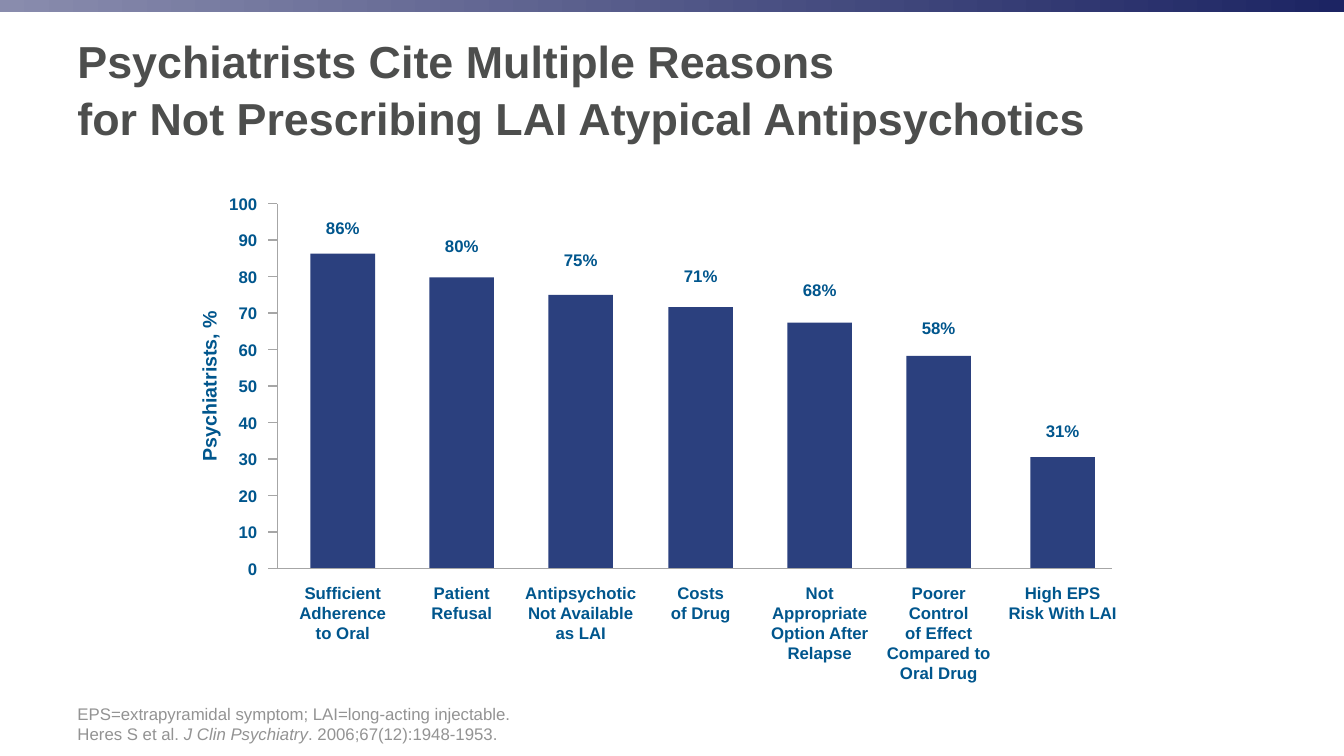
from dataclasses import dataclass

from lxml.etree import SubElement
from pptx import Presentation
from pptx.dml.color import RGBColor
from pptx.enum.shapes import MSO_CONNECTOR as Connector, MSO_SHAPE as Shape
from pptx.enum.text import MSO_ANCHOR as Anchor, PP_ALIGN as Align
from pptx.oxml.ns import qn
from pptx.util import Inches, Pt

COLORS = {
    "band_start": "898CAD",
    "band_end": "1C2463",
    "title": "4D4E4D",
    "label": "00568D",
    "bar": "2B407E",
    "axis": "A6A6A6",
    "footnote": "939393",
}
FONT = "Arial"

# Chart geometry in inches
AXIS_X, AXIS_RIGHT, TICK_X = 2.75, 11.03, 2.66
BASELINE = 5.64
UNIT = 0.0362  # height of one percentage point
BAR_WIDTH = 0.64
CAPTION_TOP = 5.73


@dataclass
class Reason:
    center: float
    percent: float
    label: str
    label_top: float
    caption: str
    caption_width: float


REASONS = [
    Reason(3.40, 86.3, "86%", 2.11, "Sufficient\vAdherence to Oral", 1.18),
    Reason(4.58, 79.8, "80%", 2.29, "Patient\vRefusal", 1.0),
    Reason(5.76, 75.0, "75%", 2.43, "Antipsychotic Not Available as LAI", 1.34),
    Reason(6.95, 71.6, "71%", 2.59, "Costs\vof Drug", 1.0),
    Reason(8.13, 67.4, "68%", 2.73, "Not Appropriate Option After Relapse", 1.31),
    Reason(9.31, 58.3, "58%", 3.10,
           "Poorer Control\vof Effect Compared to Oral Drug", 1.29),
    Reason(10.54, 30.5, "31%", 4.12, "High EPS Risk With LAI", 1.29),
]


def color(name: str) -> RGBColor:
    return RGBColor.from_string(COLORS[name])


def add_text(slide, left: float, top: float, width: float, height: float,
             lines: list[list[str]], size: int = 12, tint: str = "label",
             bold: bool = True, align=Align.CENTER, anchor=Anchor.TOP):
    """Add one paragraph per line; every second run of a line is italic."""
    box = slide.shapes.add_textbox(
        Inches(left), Inches(top), Inches(width), Inches(height))
    frame = box.text_frame
    frame.word_wrap = True
    frame.vertical_anchor = anchor
    for index, runs in enumerate(lines):
        paragraph = frame.add_paragraph() if index else frame.paragraphs[0]
        paragraph.alignment = align
        paragraph.font.name = FONT
        paragraph.font.size = Pt(size)
        paragraph.font.bold = bold
        paragraph.font.color.rgb = color(tint)
        if len(runs) == 1:
            paragraph.text = runs[0]
            continue
        for position, text in enumerate(runs):
            run = paragraph.add_run()
            run.text = text
            if position % 2:
                run.font.italic = True
    return box


def add_rectangle(slide, left: float, top: float, width: float, height: float):
    shape = slide.shapes.add_shape(
        Shape.RECTANGLE, Inches(left), Inches(top), Inches(width), Inches(height))
    shape.shadow.inherit = False
    shape.line.fill.background()
    return shape


def add_line(slide, x1: float, y1: float, x2: float, y2: float) -> None:
    line = slide.shapes.add_connector(
        Connector.STRAIGHT, Inches(x1), Inches(y1), Inches(x2), Inches(y2))
    line.line.color.rgb = color("axis")
    line.line.width = Pt(1)
    SubElement(line._element.spPr, qn("a:effectLst"))


def add_header(slide) -> None:
    band = add_rectangle(slide, 0, 0, 13.33, 0.12)
    band.fill.gradient()
    band.fill.gradient_angle = 0
    for stop, name in zip(band.fill.gradient_stops, ("band_start", "band_end")):
        stop.color.rgb = color(name)
    title = add_text(
        slide, 0.67, 0.22, 11.75, 1.3,
        [["Psychiatrists Cite Multiple Reasons\v"
          "for Not Prescribing LAI Atypical Antipsychotics"]],
        size=32, tint="title", align=Align.LEFT, anchor=Anchor.MIDDLE)
    title.text_frame.paragraphs[0].line_spacing = 1.05


def add_reason(slide, reason: Reason) -> None:
    height = reason.percent * UNIT
    bar = add_rectangle(slide, reason.center - BAR_WIDTH / 2, BASELINE - height,
                        BAR_WIDTH, height)
    bar.fill.solid()
    bar.fill.fore_color.rgb = color("bar")
    add_text(slide, reason.center - 0.43, reason.label_top, 0.86, 0.3,
             [[reason.label]])
    add_text(slide, reason.center - reason.caption_width / 2, CAPTION_TOP,
             reason.caption_width, 0.5, [[reason.caption]])


def add_axes(slide) -> None:
    add_line(slide, AXIS_X, BASELINE - 100 * UNIT, AXIS_X, BASELINE)
    for value in range(0, 101, 10):
        y = BASELINE - value * UNIT
        # The zero tick runs on as the horizontal axis
        add_line(slide, TICK_X, y, AXIS_X if value else AXIS_RIGHT, y)
        add_text(slide, 2.05, y - 0.15, 0.6, 0.3, [[str(value)]],
                 align=Align.RIGHT, anchor=Anchor.MIDDLE)
    axis_title = add_text(slide, 1.12, 3.66, 1.9, 0.34, [["Psychiatrists, %"]],
                          size=14, anchor=Anchor.MIDDLE)
    axis_title.rotation = 270


def main() -> None:
    presentation = Presentation()
    presentation.slide_width = Inches(13.33)
    presentation.slide_height = Inches(7.5)
    slide = presentation.slides.add_slide(presentation.slide_layouts[6])

    # Title area
    add_header(slide)

    # Bar chart
    for reason in REASONS:
        add_reason(slide, reason)
    add_axes(slide)

    # Footnote
    add_text(slide, 0.67, 6.95, 11.75, 0.48,
             [["EPS=extrapyramidal symptom; LAI=long-acting injectable."],
              ["Heres S et al. ", "J Clin Psychiatry", ". 2006;67(12):1948-1953."]],
             tint="footnote", bold=False, align=Align.LEFT, anchor=Anchor.BOTTOM)

    presentation.save("out.pptx")


if __name__ == "__main__":
    main()
